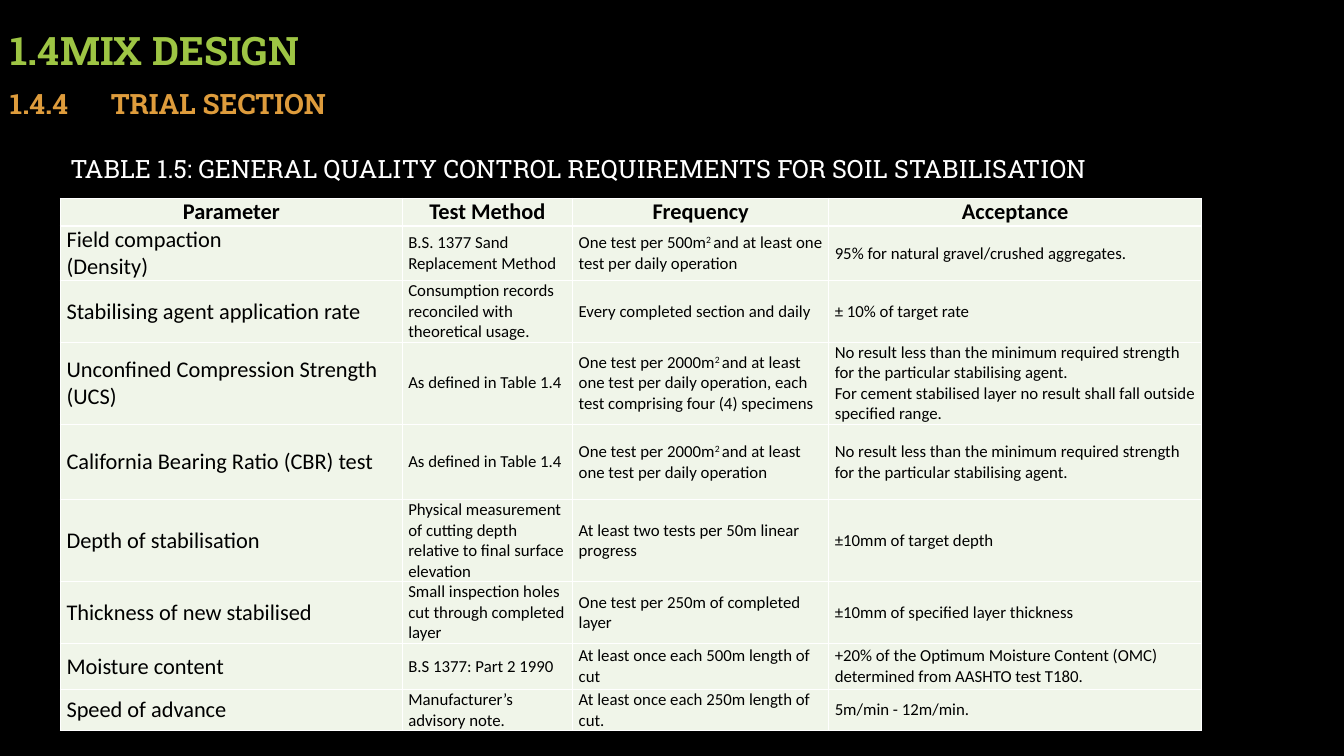
from lxml.etree import SubElement
from pptx import Presentation
from pptx.dml.color import RGBColor
from pptx.enum.text import MSO_ANCHOR, MSO_AUTO_SIZE, PP_ALIGN
from pptx.oxml.ns import qn
from pptx.util import Inches, Pt

COLORS = {"background": "000000", "heading": "9EC544", "subheading": "DE9C3C",
          "caption": "FFFFFF", "cell": "F0F5E9", "cell_text": "000000", "border": "FFFFFF"}
HEADING_FONT, TABLE_FONT = "Roboto Slab", "Calibri"

COLUMN_WIDTHS = [3.39, 1.69, 2.54, 3.7]
ROW_HEIGHTS = [0.13, 0.4, 0.4, 0.81, 0.75, 0.4, 0.4, 0.46, 0.27]
# Text between ^ marks is superscript; a line break starts a paragraph
ROWS = [
    ["Parameter", "Test Method", "Frequency", "Acceptance"],
    ["Field compaction\n(Density)", "B.S. 1377 Sand Replacement Method",
     "One test per 500m^2 ^and at least one test per daily operation",
     "95% for natural gravel/crushed aggregates."],
    ["Stabilising agent application rate",
     "Consumption records reconciled with theoretical usage.",
     "Every completed section and daily", "± 10% of target rate"],
    ["Unconfined Compression Strength (UCS)", "As defined in Table 1.4",
     "One test per 2000m^2 ^and at least one test per daily operation, "
     "each test comprising four (4) specimens",
     "No result less than the minimum required strength for the particular stabilising agent.\n"
     "For cement stabilised layer no result shall fall outside specified range."],
    ["California Bearing Ratio (CBR) test", "As defined in Table 1.4",
     "One test per 2000m^2 ^and at least one test per daily operation",
     "No result less than the minimum required strength for the particular stabilising agent."],
    ["Depth of stabilisation",
     "Physical measurement of cutting depth relative to final surface elevation",
     "At least two tests per 50m linear progress", "±10mm of target depth"],
    ["Thickness of new stabilised", "Small inspection holes cut through completed layer",
     "One test per 250m of completed layer", "±10mm of specified layer thickness"],
    ["Moisture content", "B.S 1377: Part 2 1990", "At least once each 500m length of cut",
     "+20% of the Optimum Moisture Content (OMC) determined from AASHTO test T180."],
    ["Speed of advance", "Manufacturer’s advisory note.",
     "At least once each 250m length of cut.", "5m/min - 12m/min."],
]


def set_attributes(target, values):
    for name, value in values.items():
        setattr(target, name, value)


def add_run(paragraph, text, font, size, color, bold=False):
    run = paragraph.add_run()
    run.text = text
    set_attributes(run.font, {"name": font, "size": Pt(size), "bold": bold})
    run.font.color.rgb = RGBColor.from_string(COLORS[color])
    return run


def fill_line(shape, box, text, size, color, bold, frame_format, spacing=None):
    """Put one line of heading type into a shape placed on the box."""
    set_attributes(shape, dict(zip(("left", "top", "width", "height"), map(Inches, box))))
    set_attributes(shape.text_frame, {"word_wrap": True, **frame_format})
    paragraph = shape.text_frame.paragraphs[0]
    set_attributes(paragraph, {"alignment": PP_ALIGN.LEFT, "line_spacing": spacing})
    add_run(paragraph, text, HEADING_FONT, size, color, bold)


def add_headings(slide, box):
    left, top, width, height = box
    centred = {"vertical_anchor": MSO_ANCHOR.MIDDLE, "auto_size": MSO_AUTO_SIZE.NONE}
    fill_line(slide.shapes.title, box, "1.4\tMIX DESIGN", 28, "heading", True, centred, 0.9)
    subheading = slide.shapes.add_textbox(0, 0, 0, 0)
    fill_line(subheading, (left, top + 0.52, width, height), "1.4.4\tTRIAL SECTION",
              20, "subheading", True, centred, 0.9)


def add_caption(slide, box):
    fill_line(slide.shapes.add_textbox(0, 0, 0, 0), box,
              "TABLE 1.5: GENERAL QUALITY CONTROL REQUIREMENTS FOR SOIL STABILISATION",
              18, "caption", False, {"auto_size": MSO_AUTO_SIZE.SHAPE_TO_FIT_TEXT})


def add_borders(cell):
    properties = cell._tc.get_or_add_tcPr()
    for side in ("lnL", "lnR", "lnT", "lnB"):
        line = SubElement(properties, qn("a:" + side), w=str(Pt(1)))
        solid = SubElement(line, qn("a:solidFill"))
        SubElement(solid, qn("a:srgbClr"), val=COLORS["border"])


def fill_cell(cell, text, size, header):
    set_attributes(cell, {"vertical_anchor": MSO_ANCHOR.MIDDLE,
                          "margin_left": Inches(0.06), "margin_right": Inches(0.06),
                          "margin_top": 0, "margin_bottom": 0})
    add_borders(cell)
    cell.fill.solid()
    cell.fill.fore_color.rgb = RGBColor.from_string(COLORS["cell"])
    for index, line in enumerate(text.split("\n")):
        frame = cell.text_frame
        paragraph = frame.add_paragraph() if index else frame.paragraphs[0]
        paragraph.alignment = PP_ALIGN.CENTER if header else PP_ALIGN.LEFT
        for part, piece in enumerate(line.split("^")):
            run = add_run(paragraph, piece, TABLE_FONT, size, "cell_text", header)
            if part % 2:
                run._r.get_or_add_rPr().set("baseline", "30000")


def add_requirements_table(slide, box):
    frame = slide.shapes.add_table(len(ROWS), len(COLUMN_WIDTHS), *map(Inches, box))
    table = frame.table
    for column, width in zip(table.columns, COLUMN_WIDTHS):
        column.width = Inches(width)
    for row, height in zip(table.rows, ROW_HEIGHTS):
        row.height = Inches(height)
    frame.height = Inches(box[3])
    for row_index, texts in enumerate(ROWS):
        for column_index, text in enumerate(texts):
            header = row_index == 0
            size = 16 if header or column_index == 0 else 12
            fill_cell(table.cell(row_index, column_index), text, size, header)


def main():
    presentation = Presentation()
    set_attributes(presentation, {"slide_width": Inches(13.33), "slide_height": Inches(7.5)})
    slide = presentation.slides.add_slide(presentation.slide_layouts[5])
    slide.background.fill.solid()
    slide.background.fill.fore_color.rgb = RGBColor.from_string(COLORS["background"])
    add_headings(slide, (0, 0, 11.32, 1.05))
    add_requirements_table(slide, (0.6, 1.97, 11.32, 5.22))
    add_caption(slide, (0.6, 1.47, 10.46, 0.4))
    presentation.save("out.pptx")


if __name__ == "__main__":
    main()
